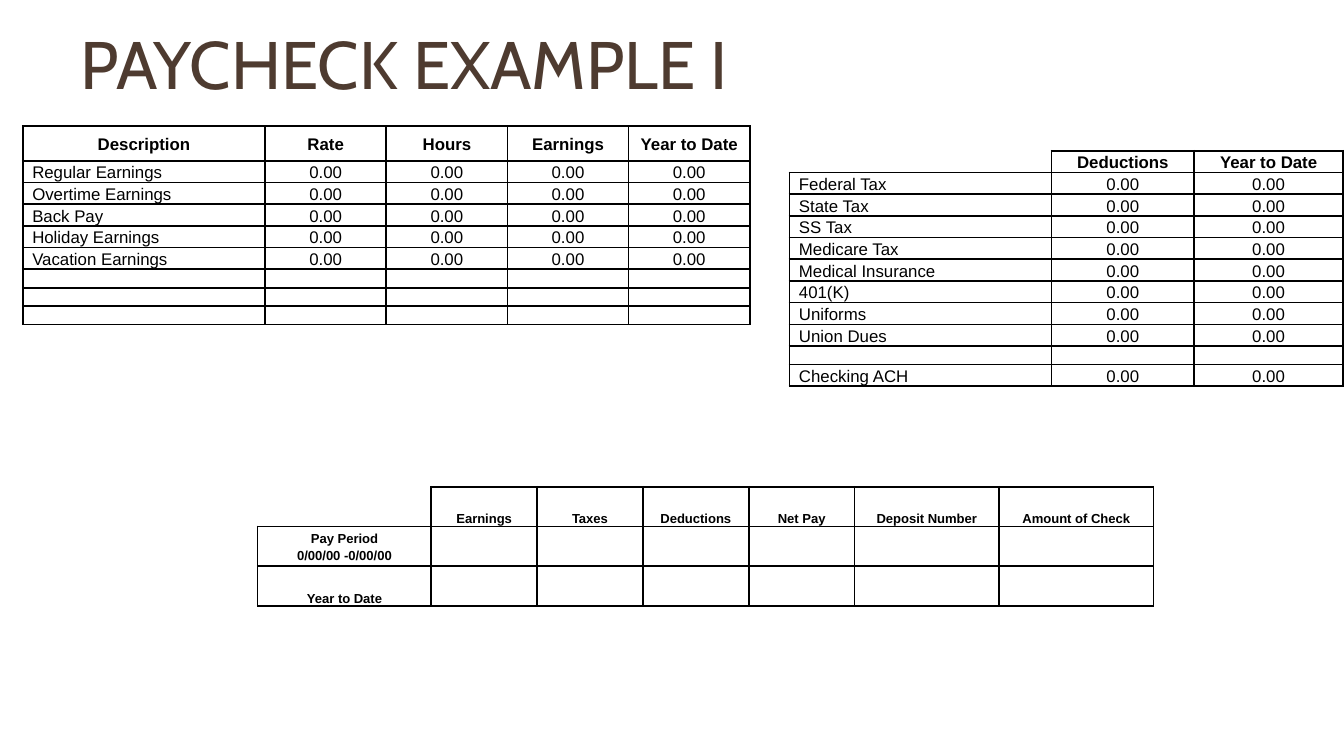
from dataclasses import dataclass

from lxml import etree
from pptx import Presentation
from pptx.dml.color import RGBColor
from pptx.enum.text import MSO_ANCHOR, MSO_AUTO_SIZE, PP_ALIGN
from pptx.oxml.ns import qn
from pptx.util import Cm, Pt

LEFT, CENTER = PP_ALIGN.LEFT, PP_ALIGN.CENTER
TOP, MIDDLE, BOTTOM = MSO_ANCHOR.TOP, MSO_ANCHOR.MIDDLE, MSO_ANCHOR.BOTTOM
NO_AUTOFIT = MSO_AUTO_SIZE.NONE


@dataclass(frozen=True)
class Theme:
    title_font: str = "Cabin"
    table_font: str = "Arial"
    title_color: str = "4E3B30"
    ink: str = "000000"
    title_size: int = 36
    body_size: int = 9
    summary_size: int = 7
    blank_size: int = 8
    border_width: int = 1
    line_spacing: float = 1.15
    text_row: float = 0.41
    blank_row: float = 0.35


def write_text(text_frame, text, *, font, size, color, bold=False, align=LEFT,
               anchor=TOP, line_spacing=None, space_after=0):
    text_frame.text = text
    text_frame.vertical_anchor = anchor
    for paragraph in text_frame.paragraphs:
        paragraph.alignment = align
        paragraph.space_after = Pt(space_after)
        if line_spacing:
            paragraph.line_spacing = line_spacing
        for run in paragraph.runs:
            run.font.name = font
            run.font.size = Pt(size)
            run.font.bold = bold
            run.font.color.rgb = RGBColor.from_string(color)


class PaycheckSlide:
    def __init__(self, slide, theme):
        self.slide = slide
        self.theme = theme

    def title(self, text, left, top, width, height):
        shape = self.slide.shapes.title
        shape.left, shape.top = Cm(left), Cm(top)
        shape.width, shape.height = Cm(width), Cm(height)
        shape.text_frame.auto_size = NO_AUTOFIT
        write_text(shape.text_frame, text, font=self.theme.title_font,
                   size=self.theme.title_size, color=self.theme.title_color, anchor=MIDDLE)

    def borders(self, cell, sides):
        properties = cell._tc.get_or_add_tcPr()
        for side in "LRTB":
            line = etree.SubElement(properties, qn(f"a:ln{side}"),
                                    w=str(Pt(self.theme.border_width)))
            if side in sides:
                fill = etree.SubElement(line, qn("a:solidFill"))
                etree.SubElement(fill, qn("a:srgbClr"), val=self.theme.ink)
            else:
                etree.SubElement(line, qn("a:noFill"))

    def cell(self, cell, text, sides, margin, **text_format):
        self.borders(cell, sides)
        cell.fill.background()
        cell.margin_left = cell.margin_right = Cm(margin)
        cell.margin_top = cell.margin_bottom = 0
        if text:
            write_text(cell.text_frame, text, font=self.theme.table_font,
                       color=self.theme.ink, line_spacing=self.theme.line_spacing, **text_format)
            cell.vertical_anchor = text_format["anchor"]
        else:
            end = cell.text_frame.paragraphs[0]._p.get_or_add_endParaRPr()
            end.set("sz", str(self.theme.blank_size * 100))

    def table(self, rows, left, top, columns, heights, cell_format, margin):
        frame = self.slide.shapes.add_table(len(rows), len(columns), Cm(left), Cm(top),
                                            Cm(sum(columns)), Cm(sum(heights)))
        table = frame.table
        table.first_row = table.horz_banding = False
        for column, width in zip(table.columns, columns):
            column.width = Cm(width)
        for row, height in zip(table.rows, heights):
            row.height = Cm(height)
        for row_index, texts in enumerate(rows):
            for column_index, text in enumerate(texts):
                open_corner = row_index == column_index == 0 and not text
                self.cell(table.cell(row_index, column_index), text,
                          "RB" if open_corner else "LRTB", margin,
                          **cell_format(row_index, column_index))

    def amounts_table(self, header, labels, left, top, columns, header_height):
        theme = self.theme

        def cell_format(row_index, column_index):
            is_header = row_index == 0
            return dict(size=theme.body_size, bold=is_header,
                        align=CENTER if is_header or column_index else LEFT,
                        anchor=MIDDLE if is_header else TOP)

        amount_count = len(columns) - 1
        rows = [header] + [[label] + ["0.00" if label else ""] * amount_count
                           for label in labels]
        heights = [header_height] + [theme.text_row if label else theme.blank_row
                                     for label in labels]
        self.table(rows, left, top, columns, heights, cell_format, 0.18)

    def summary_table(self, header, labels, left, top, columns, row_height):
        def cell_format(row_index, column_index):
            is_period = row_index == 1
            return dict(size=self.theme.summary_size, bold=True, align=CENTER,
                        anchor=MIDDLE if is_period else BOTTOM,
                        space_after=0 if is_period else 8)

        rows = [header] + [[label] + [""] * (len(columns) - 1) for label in labels]
        self.table(rows, left, top, columns, [row_height] * len(rows), cell_format, 0.13)


def main():
    presentation = Presentation()
    presentation.slide_width, presentation.slide_height = Cm(25.4), Cm(14.29)
    theme = Theme()
    slide = presentation.slides.add_slide(presentation.slide_layouts[5])
    paycheck = PaycheckSlide(slide, theme)

    paycheck.title("PAYCHECK EXAMPLE I", 1.27, 0.3, 24.13, 1.75)
    paycheck.amounts_table(
        ["", "Deductions", "Year to Date"],
        ["Federal Tax", "State Tax", "SS Tax", "Medicare Tax", "Medical Insurance",
         "401(K)", "Uniforms", "Union Dues", "", "Checking ACH"],
        14.92, 2.85, [4.95, 2.7, 2.81], theme.text_row)
    paycheck.amounts_table(
        ["Description", "Rate", "Hours", "Earnings", "Year to Date"],
        ["Regular Earnings", "Overtime Earnings", "Back Pay", "Holiday Earnings",
         "Vacation Earnings", "", "", ""],
        0.43, 2.38, [4.58] + [2.29] * 4, 0.66)
    paycheck.summary_table(
        ["", "Earnings", "Taxes", "Deductions", "Net Pay", "Deposit Number",
         "Amount of Check"],
        ["Pay Period\n0/00/00 -0/00/00", "Year to Date"],
        4.87, 9.2, [3.28] + [2] * 4 + [2.73, 2.92], 0.75)

    presentation.save("out.pptx")


if __name__ == "__main__":
    main()
